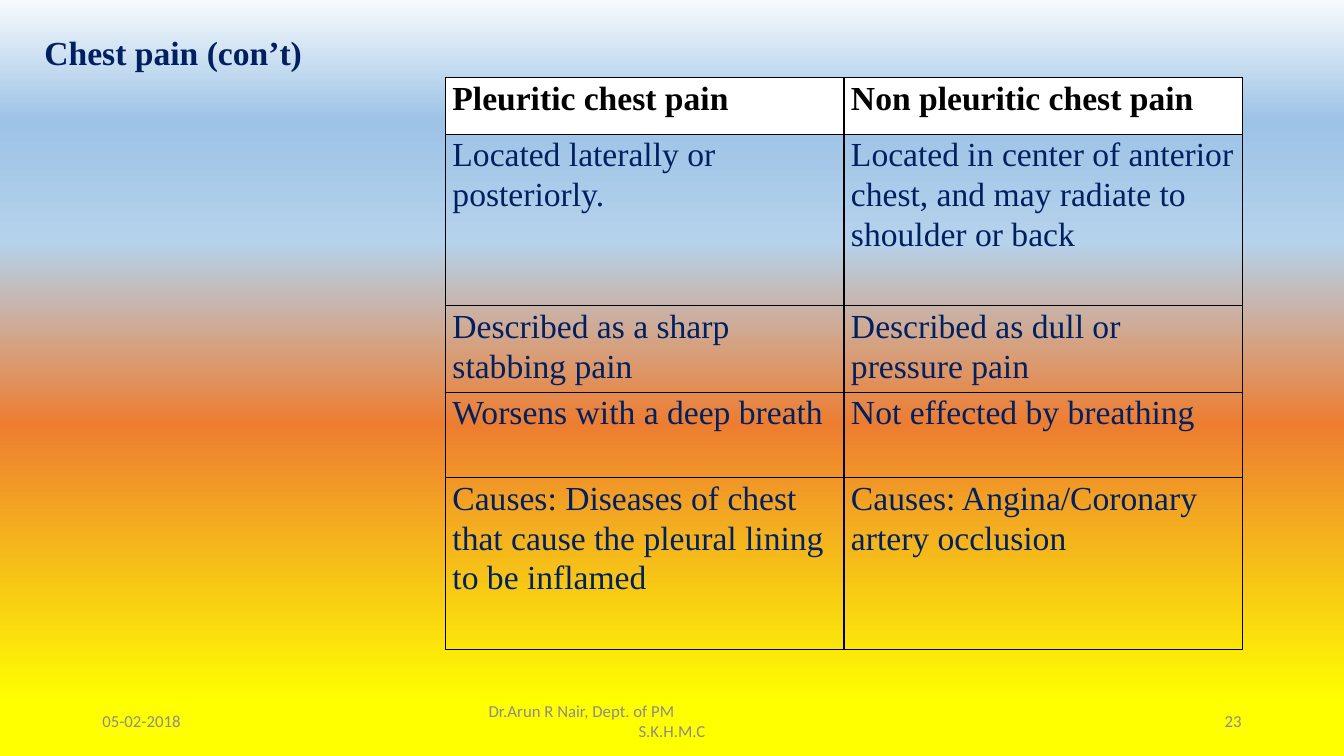
from pptx import Presentation
from pptx.dml.color import RGBColor
from pptx.enum.text import MSO_ANCHOR, MSO_AUTO_SIZE, PP_ALIGN
from pptx.oxml import parse_xml
from pptx.oxml.ns import nsdecls
from pptx.util import Pt


def style(para, font, size, color, bold=False):
    for run in para.runs:
        run.font.name = font
        run.font.size = Pt(size)
        run.font.bold = bold
        run.font.color.rgb = RGBColor.from_string(color)


prs = Presentation()
prs.slide_width, prs.slide_height = Pt(960), Pt(540)
slide = prs.slides.add_slide(prs.slide_layouts[5])

# Background: vertical gradient from pale blue to yellow
fill = slide.background.fill
fill.gradient()
fill.gradient_angle = 270
stops = slide.element.xpath(".//p:bg//a:gsLst")[0]
for stop in list(stops):
    stops.remove(stop)
for share, color in [(0, "F7FAFD"), (16, "9DC3E6"), (32, "B5D2EC"),
                     (56, "ED7D31"), (93, "FFFF00")]:
    stops.append(parse_xml(f'<a:gs {nsdecls("a")} pos="{share * 1000}">'
                           f'<a:srgbClr val="{color}"/></a:gs>'))

# Title
title = slide.shapes.title
title.left, title.top, title.width, title.height = Pt(24.5), Pt(19.5), Pt(200), Pt(36)
frame = title.text_frame
frame.text = "Chest pain (con’t)"
frame.word_wrap = False
frame.auto_size = MSO_AUTO_SIZE.SHAPE_TO_FIT_TEXT
frame.vertical_anchor = MSO_ANCHOR.TOP
frame.paragraphs[0].alignment = PP_ALIGN.LEFT
style(frame.paragraphs[0], "Times New Roman", 24, "002060", True)

# Comparison table
rows = [
    ("Pleuritic chest pain", "Non pleuritic chest pain"),
    ("Located laterally or posteriorly.",
     "Located in center of anterior chest, and may radiate to shoulder or back"),
    ("Described as a sharp stabbing pain", "Described as dull or pressure pain"),
    ("Worsens with a deep breath", "Not effected by breathing"),
    ("Causes: Diseases of chest that cause the pleural lining to be inflamed",
     "Causes: Angina/Coronary artery occlusion"),
]
heights = [40.5, 122.4, 61.2, 61.2, 122.4]
table = slide.shapes.add_table(len(rows), 2, Pt(318.2), Pt(55.6),
                               Pt(569.4), Pt(sum(heights))).table
table.first_row = table.horz_banding = False
for col in table.columns:
    col.width = Pt(284.7)
for r, (texts, height) in enumerate(zip(rows, heights)):
    table.rows[r].height = Pt(height)
    for c, text in enumerate(texts):
        cell = table.cell(r, c)
        cell.text = text
        cell.margin_left = cell.margin_right = Pt(5)
        cell.margin_top = cell.margin_bottom = 0
        para = cell.text_frame.paragraphs[0]
        para.line_spacing = 1.07
        head = r == 0
        style(para, "Times New Roman", 24, "000000" if head else "002060", head)
        if head:
            cell.fill.solid()
            cell.fill.fore_color.rgb = RGBColor.from_string("FFFFFF")
        else:
            cell.fill.background()
        props = cell._tc.get_or_add_tcPr()
        for i, side in enumerate("LRTB"):
            props.insert(i, parse_xml(
                f'<a:ln{side} {nsdecls("a")} w="12700"><a:solidFill>'
                f'<a:srgbClr val="000000"/></a:solidFill></a:ln{side}>'))

# Footer: date, author, slide number
for left, width, text, align in [
    (66, 216, "05-02-2018", PP_ALIGN.LEFT),
    (318, 324, "Dr.Arun R Nair, Dept. of PM\nS.K.H.M.C", PP_ALIGN.CENTER),
    (678, 216, "23", PP_ALIGN.RIGHT),
]:
    frame = slide.shapes.add_textbox(Pt(left), Pt(500.5), Pt(width), Pt(28.75)).text_frame
    frame.word_wrap = True
    frame.vertical_anchor = MSO_ANCHOR.MIDDLE
    frame.text = text
    for para in frame.paragraphs:
        para.alignment = align
        style(para, "Calibri", 12, "8C8C8C")
    if align == PP_ALIGN.CENTER:
        # The author's name sits left of the centred second line
        name = frame.paragraphs[0]
        name.alignment = PP_ALIGN.LEFT
        name._p.get_or_add_pPr().set("marL", str(Pt(24)))
prs.save("out.pptx")
